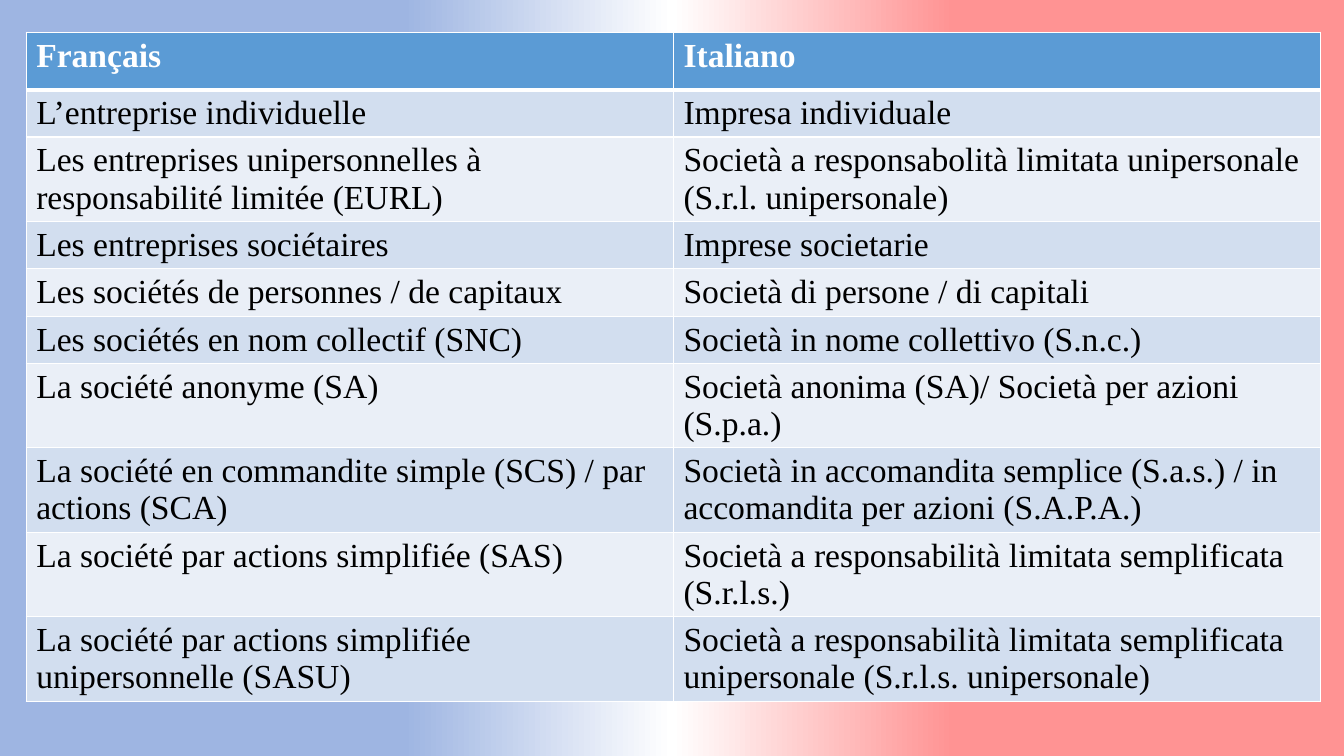
from typing import NamedTuple

from copy import deepcopy
from lxml import etree
from pptx import Presentation
from pptx import util as u
from pptx.dml.color import RGBColor
from pptx.oxml.ns import qn

FONT = "Times New Roman"
HEADER_FILL = "5B9BD5"
BAND_FILLS = ("EAEFF7", "D2DEEF")
WHITE = "FFFFFF"
BLACK = "000000"
FLAG_STOPS = ((0.3, "9EB5E2"), (0.5, WHITE), (0.71, "FF9393"))


class Term(NamedTuple):
    french: str
    italian: str


TERMS = (
    Term("Français", "Italiano"),
    Term("L’entreprise individuelle", "Impresa individuale"),
    Term("Les entreprises unipersonnelles à responsabilité limitée (EURL)",
         "Società a responsabolità limitata unipersonale (S.r.l. unipersonale)"),
    Term("Les entreprises sociétaires", "Imprese societarie"),
    Term("Les sociétés de personnes / de capitaux", "Società di persone / di capitali"),
    Term("Les sociétés en nom collectif (SNC)", "Società in nome collettivo (S.n.c.)"),
    Term("La société anonyme (SA)", "Società anonima (SA)/ Società per azioni (S.p.a.)"),
    Term("La société en commandite simple (SCS) / par actions (SCA)",
         "Società in accomandita semplice (S.a.s.) / in accomandita per azioni (S.A.P.A.)"),
    Term("La société par actions simplifiée (SAS)",
         "Società a responsabilità limitata semplificata (S.r.l.s.)"),
    Term("La société par actions simplifiée unipersonnelle (SASU)",
         "Società a responsabilità limitata semplificata unipersonale (S.r.l.s. unipersonale)"),
)


def colour(value: str) -> RGBColor:
    return RGBColor.from_string(value)


def paint_flag(slide) -> None:
    fill = slide.background.fill
    fill.gradient()
    fill.gradient_angle = 0
    stop_list = slide.element.find(".//" + qn("a:gsLst"))
    stop_list.append(deepcopy(stop_list[-1]))
    for stop, (position, value) in zip(fill.gradient_stops, FLAG_STOPS):
        stop.position = position
        stop.color.rgb = colour(value)


def add_borders(cell, top: float, bottom: float) -> None:
    properties = cell._tc.get_or_add_tcPr()
    for side, width in (("L", 1), ("R", 1), ("T", top), ("B", bottom)):
        line = etree.SubElement(properties, qn(f"a:ln{side}"), w=str(u.Pt(width)))
        solid = etree.SubElement(line, qn("a:solidFill"))
        etree.SubElement(solid, qn("a:srgbClr"), val=WHITE)


def fill_cell(cell, wording: str, row: int) -> None:
    is_header = row == 0
    add_borders(cell, top=3 if row == 1 else 1, bottom=3 if is_header else 1)
    cell.fill.solid()
    cell.fill.fore_color.rgb = colour(HEADER_FILL if is_header else BAND_FILLS[row % 2])
    cell.text = wording
    font = cell.text_frame.paragraphs[0].font
    font.name = FONT
    font.size = u.Pt(24)
    font.bold = is_header
    font.color.rgb = colour(WHITE if is_header else BLACK)


def add_glossary(slide) -> None:
    glossary = slide.shapes.add_table(
        len(TERMS), 2, u.Inches(0.26), u.Inches(0.32), u.Inches(12.84), u.Inches(4.8)
    ).table
    for row, term in enumerate(TERMS):
        glossary.rows[row].height = u.Inches(0.47 if row else 0.57)
        for column, wording in enumerate(term):
            fill_cell(glossary.cell(row, column), wording, row)


def main() -> None:
    deck = Presentation()
    deck.slide_width = u.Inches(13.33)
    deck.slide_height = u.Inches(7.5)
    slide = deck.slides.add_slide(deck.slide_layouts[6])
    paint_flag(slide)
    add_glossary(slide)
    deck.save("out.pptx")


if __name__ == "__main__":
    main()
